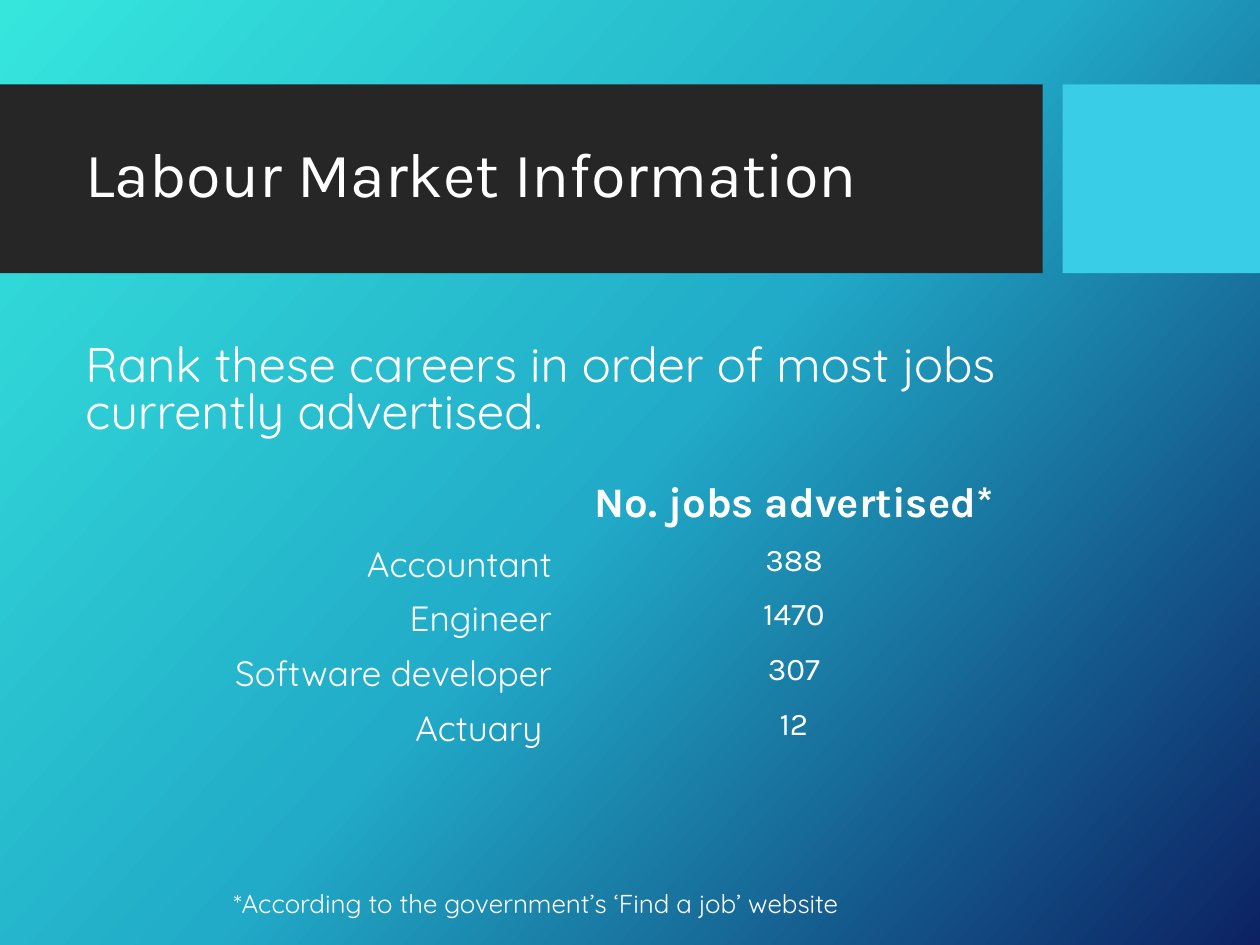
from copy import deepcopy

from pptx import Presentation
from pptx.dml.color import RGBColor
from pptx.enum.shapes import MSO_SHAPE
from pptx.enum.text import MSO_ANCHOR, MSO_AUTO_SIZE, PP_ALIGN
from pptx.oxml.ns import qn
from pptx.util import Cm, Pt

WHITE = RGBColor(0xFF, 0xFF, 0xFF)
CHARCOAL = RGBColor(0x26, 0x26, 0x26)
SKY = RGBColor(0x39, 0xCD, 0xE7)
AQUA = RGBColor(0x36, 0xE6, 0xDD)
TEAL = RGBColor(0x21, 0xAB, 0xC8)
NAVY = RGBColor(0x0C, 0x22, 0x63)

NO_STYLE = "{2D5ABB26-0587-4C30-8999-92F81FD0307C}"
HEADER = {"name": "Karla", "size": Pt(24), "bold": True}
CAREER = {"name": "Quicksand", "size": Pt(20)}
COUNT = {"name": "Karla", "size": Pt(18)}
JOBS = [
    ("Accountant", "388"),
    ("Engineer", "1470"),
    ("Software developer", "307"),
    ("Actuary ", "12"),
]


def set_background(s):
    fill = s.background.fill
    fill.gradient()
    fill.gradient_angle = 360 - 42
    stops = s.element.find(".//" + qn("a:gsLst"))
    stops.append(deepcopy(stops[0]))
    for i, (stop, color) in enumerate(zip(fill.gradient_stops, (AQUA, TEAL, NAVY))):
        stop.position = i / 2
        stop.color.rgb = color


def write(tf, text, fmt, align=PP_ALIGN.LEFT, spacing=1.0):
    p = tf.paragraphs[0]
    p.alignment = align
    p.line_spacing = spacing
    r = p.add_run()
    r.text = text
    r.font.color.rgb = WHITE
    for key, value in fmt.items():
        setattr(r.font, key, value)


def add_band(s, left, width, color):
    sp = s.shapes.add_shape(MSO_SHAPE.RECTANGLE, Cm(left), Cm(1.7), Cm(width), Cm(3.81))
    sp.shadow.inherit = False
    sp.fill.solid()
    sp.fill.fore_color.rgb = color
    sp.line.fill.background()
    return sp


def set_title(s, text, behind):
    sp = s.shapes.title
    behind.element.addnext(sp.element)
    sp.left, sp.top, sp.width, sp.height = Cm(1.47), Cm(2.08), Cm(19.15), Cm(3)
    tf = sp.text_frame
    tf.auto_size = MSO_AUTO_SIZE.NONE
    tf.vertical_anchor = MSO_ANCHOR.MIDDLE
    write(tf, text, {"name": "Karla", "size": Pt(36)}, spacing=0.9)


def add_text(s, text, left, top, width, height, size):
    tf = s.shapes.add_textbox(Cm(left), Cm(top), Cm(width), Cm(height)).text_frame
    tf.word_wrap = True
    write(tf, text, {"name": "Quicksand", "size": Pt(size)}, spacing=0.8)


def add_jobs_table(s):
    rows = len(JOBS) + 1
    frame = s.shapes.add_table(rows, 2, Cm(2.13), Cm(9.53), Cm(18.5), Cm(1.04 * rows))
    table = frame.table
    table.first_row = table.horz_banding = False
    frame.element.find(".//" + qn("a:tableStyleId")).text = NO_STYLE
    for cell in table.iter_cells():
        cell.fill.background()
    write(table.cell(0, 1).text_frame, "No. jobs advertised*", HEADER, PP_ALIGN.CENTER)
    for i, (career, count) in enumerate(JOBS, 1):
        write(table.cell(i, 0).text_frame, career, CAREER, PP_ALIGN.RIGHT)
        write(table.cell(i, 1).text_frame, count, COUNT, PP_ALIGN.CENTER)


def main():
    prs = Presentation()
    prs.slide_width, prs.slide_height = Cm(25.4), Cm(19.05)
    s = prs.slides.add_slide(prs.slide_layouts[5])
    set_background(s)
    add_band(s, 0, 21.02, CHARCOAL)
    accent = add_band(s, 21.42, 3.98, SKY)
    set_title(s, "Labour Market Information", accent)
    add_text(s, "Rank these careers in order of most jobs currently advertised.",
             1.47, 6.83, 21.8, 2.4, 27.8)
    add_text(s, "*According to the government’s ‘Find a job’ website",
             4.46, 17.88, 14, 0.9, 14.8)
    add_jobs_table(s)
    prs.save("out.pptx")


if __name__ == "__main__":
    main()
